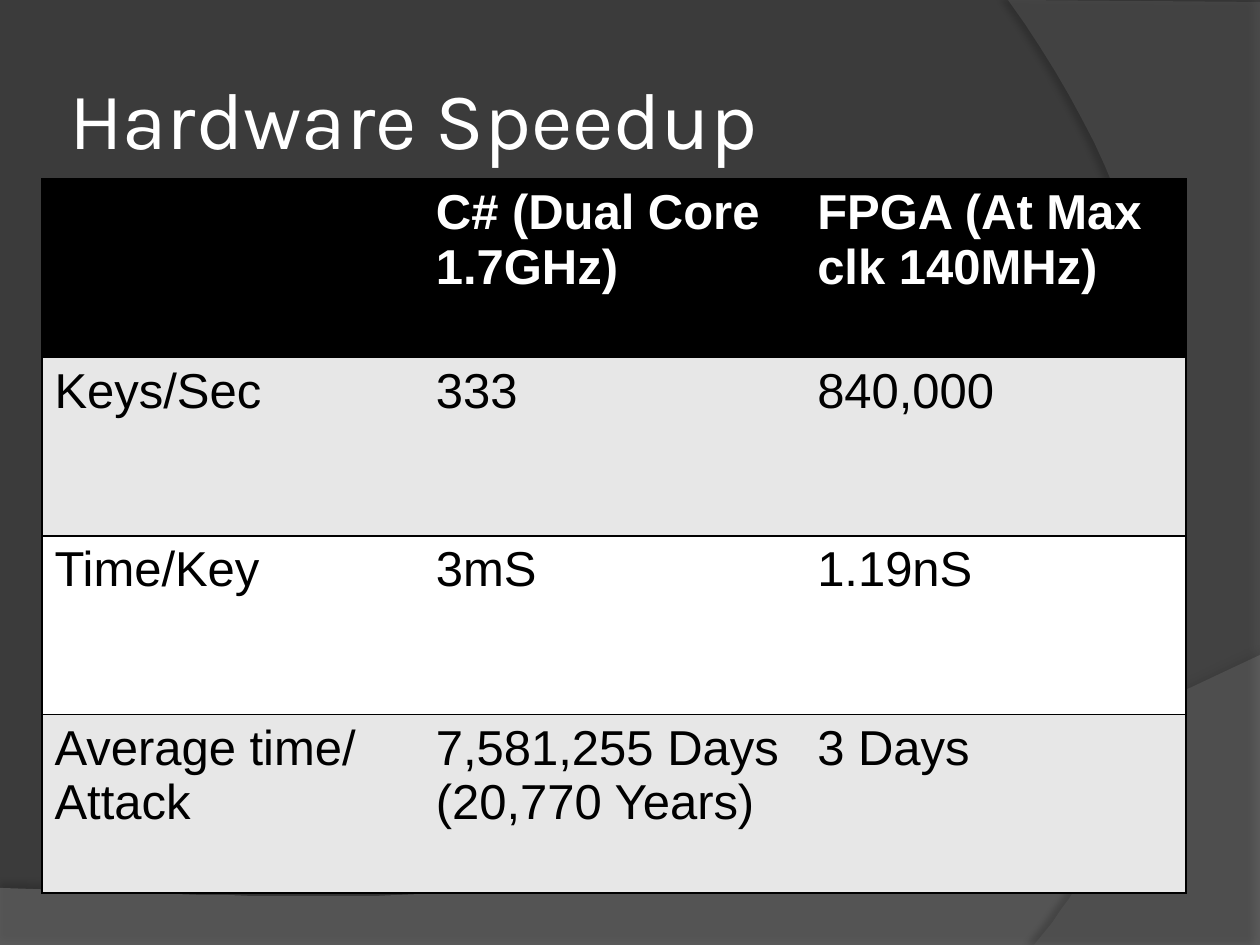
from dataclasses import dataclass

from lxml import etree
from pptx import Presentation
from pptx.dml.color import RGBColor
from pptx.enum.text import MSO_ANCHOR, PP_ALIGN
from pptx.oxml import parse_xml
from pptx.oxml.ns import nsdecls, qn
from pptx.util import Pt

PX = 914400 // 126
LEFT = PP_ALIGN.LEFT
MIDDLE = MSO_ANCHOR.MIDDLE
TITLE_ONLY = 5
CURVE_STEPS = 48


@dataclass(frozen=True)
class Theme:
    background: str = "3B3B3B"
    wave: str = "7F7F7F"
    arc: str = "5E5E5E"
    light: str = "FFFFFF"
    dark: str = "000000"
    band: str = "E7E7E7"
    title_font: str = "Karla"
    body_font: str = "Arial"
    title_size: int = 46
    body_size: int = 28
    border: int = 1


def bezier(p0, p1, p2, p3):
    """Points along a cubic curve, without its first point."""
    for i in range(1, CURVE_STEPS + 1):
        t = i / CURVE_STEPS
        u = 1 - t
        yield tuple(u**3 * a + 3 * u * u * t * b + 3 * u * t * t * c + t**3 * d
                    for a, b, c, d in zip(p0, p1, p2, p3))


class SlideBuilder:
    def __init__(self, prs, theme):
        self.theme = theme
        self.s = prs.slides.add_slide(prs.slide_layouts[TITLE_ONLY])
        fill = self.s.background.fill
        fill.solid()
        fill.fore_color.rgb = RGBColor.from_string(theme.background)

    def style(self, tf, font, size, color, bold=False):
        for p in tf.paragraphs:
            p.alignment = LEFT
            for r in p.runs:
                r.font.name = font
                r.font.size = Pt(size)
                r.font.bold = bold
                r.font.color.rgb = RGBColor.from_string(color)

    def backdrop(self, points, color, opacity, shadow_opacity, distance, angle):
        fb = self.s.shapes.build_freeform(*points[0], scale=PX)
        fb.add_line_segments(points[1:], close=True)
        sp = fb.convert_to_shape()
        sp.fill.solid()
        sp.fill.fore_color.rgb = RGBColor.from_string(color)
        sp.line.fill.background()
        clr = sp._element.spPr.find(qn("a:solidFill"))[0]
        etree.SubElement(clr, qn("a:alpha"), val=str(opacity * 1000))
        sp._element.spPr.append(parse_xml(
            f'<a:effectLst {nsdecls("a")}><a:outerShdw blurRad="{Pt(4)}" '
            f'dist="{Pt(distance)}" dir="{angle * 60000}" rotWithShape="0">'
            f'<a:srgbClr val="{self.theme.dark}"><a:alpha val="{shadow_opacity * 1000}"/>'
            '</a:srgbClr></a:outerShdw></a:effectLst>'))

    def title(self, text, x, y, w, h, inset):
        sp = self.s.shapes.title
        sp.left, sp.top, sp.width, sp.height = (v * PX for v in (x, y, w, h))
        tf = sp.text_frame
        tf.text = text
        tf.word_wrap = True
        tf.vertical_anchor = MIDDLE
        tf.margin_left = tf.margin_right = tf.margin_top = tf.margin_bottom = inset * PX
        self.style(tf, self.theme.title_font, self.theme.title_size, self.theme.light)
        # Bring the title in front of the backdrop
        self.s.shapes._spTree.append(sp._element)

    def borders(self, cell, left, right):
        tc_pr = cell._tc.get_or_add_tcPr()
        for tag, shown in (("lnL", left), ("lnR", right), ("lnT", True), ("lnB", True)):
            ln = etree.SubElement(tc_pr, qn(f"a:{tag}"), w=str(Pt(self.theme.border)))
            if shown:
                fill = etree.SubElement(ln, qn("a:solidFill"))
                etree.SubElement(fill, qn("a:srgbClr"), val=self.theme.dark)
            else:
                etree.SubElement(ln, qn("a:noFill"))

    def table(self, rows, x, y, w, h):
        th = self.theme
        n_cols = len(rows[0])
        frame = self.s.shapes.add_table(len(rows), n_cols, x * PX, y * PX, w * PX, h * PX)
        for i, row in enumerate(rows):
            header = i == 0
            fill = th.dark if header else (th.light, th.band)[i % 2]
            for j, text in enumerate(row):
                cell = frame.table.cell(i, j)
                cell.text_frame.text = text
                self.style(cell.text_frame, th.body_font, th.body_size,
                           th.light if header else th.dark, header)
                self.borders(cell, j == 0, j == n_cols - 1)
                cell.fill.solid()
                cell.fill.fore_color.rgb = RGBColor.from_string(fill)


def main():
    theme = Theme()
    prs = Presentation()
    prs.slide_width, prs.slide_height = 1260 * PX, 945 * PX
    slide = SlideBuilder(prs, theme)

    # Curved backdrop: wave along the bottom, arc on the right
    wave = [(0, 888), (0, 946), (1260, 946), (1260, 655),
            *bezier((1260, 655), (704, 919), (493, 906), (0, 888))]
    arc = [(1260, 2), (1260, 945), (1034, 945),
           *bezier((1034, 945), (1178, 780), (1283, 378), (1008, 0))]
    slide.backdrop(wave, theme.wave, 45, 35, 3.5, 270)
    slide.backdrop(arc, theme.arc, 40, 45, 4, 180)

    # Title
    slide.title("Hardware Speedup", 63, 38, 1029, 158, 6)

    # Comparison table
    slide.table([
        ("", "C# (Dual Core 1.7GHz)", "FPGA (At Max clk 140MHz)"),
        ("Keys/Sec", "333", "840,000"),
        ("Time/Key", "3mS", "1.19nS"),
        ("Average time/\nAttack", "7,581,255 Days\n(20,770 Years)", "3 Days"),
    ], 42, 179, 1144, 714)

    prs.save("out.pptx")


if __name__ == "__main__":
    main()
